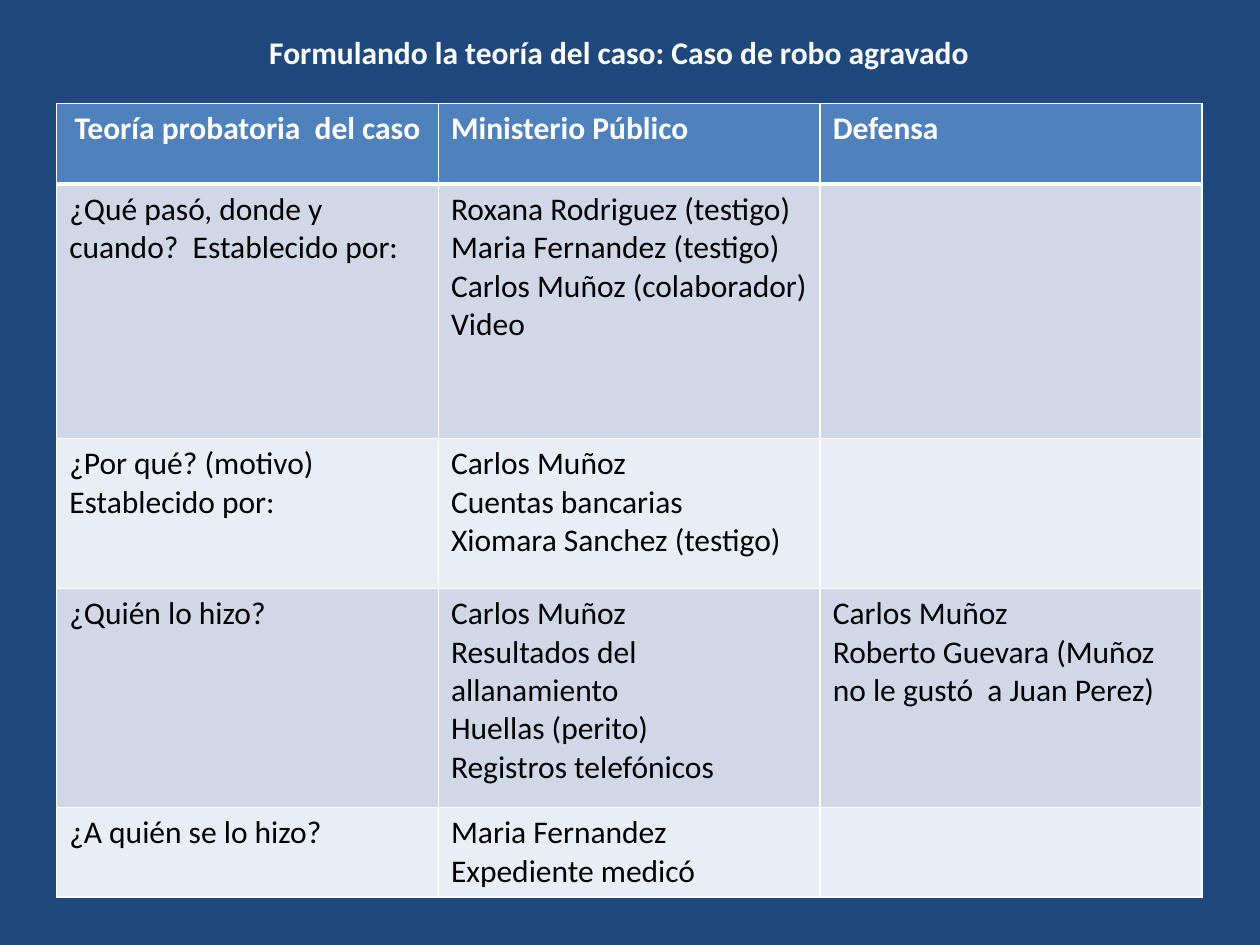
from lxml.etree import SubElement
from pptx import Presentation
from pptx.dml.color import RGBColor
from pptx.enum.text import MSO_AUTO_SIZE, PP_ALIGN
from pptx.oxml.ns import qn
from pptx.util import Inches, Pt

NAVY = RGBColor(0x1F, 0x49, 0x7D)
BLUE = RGBColor(0x4F, 0x81, 0xBD)
BAND_DARK = RGBColor(0xD0, 0xD8, 0xE8)
BAND_LIGHT = RGBColor(0xE9, 0xED, 0xF4)
WHITE = RGBColor(0xFF, 0xFF, 0xFF)
BLACK = RGBColor(0x00, 0x00, 0x00)

TITLE = "Formulando la teoría del caso: Caso de robo agravado"
ROW_HEIGHTS = [0.64, 2.02, 1.19, 1.74, 0.67]
ROWS = [
    ["Teoría probatoria  del caso", "Ministerio Público", "Defensa"],
    ["¿Qué pasó, donde y cuando?  Establecido por:",
     "Roxana Rodriguez (testigo)\nMaria Fernandez (testigo)\n"
     "Carlos Muñoz (colaborador)\nVideo", ""],
    ["¿Por qué? (motivo)\nEstablecido por:",
     "Carlos Muñoz\nCuentas bancarias\nXiomara Sanchez (testigo)", ""],
    ["¿Quién lo hizo?",
     "Carlos Muñoz\nResultados del allanamiento\nHuellas (perito)\nRegistros telefónicos",
     "Carlos Muñoz\nRoberto Guevara (Muñoz no le gustó  a Juan Perez)"],
    ["¿A quién se lo hizo?", "Maria Fernandez\nExpediente medicó", ""],
]


def format_text(text_frame, color, bold, alignment=PP_ALIGN.LEFT):
    for paragraph in text_frame.paragraphs:
        paragraph.alignment = alignment
        paragraph.font.size = Pt(18)
        for run in paragraph.runs:
            run.font.name = "Calibri"
            run.font.size = Pt(18)
            run.font.bold = bold
            run.font.color.rgb = color


def set_borders(cell, top, bottom):
    """Draw white cell borders; must run before the cell is filled."""
    properties = cell._tc.get_or_add_tcPr()
    for side, points in (("L", 1), ("R", 1), ("T", top), ("B", bottom)):
        line = SubElement(properties, qn(f"a:ln{side}"), w=str(Pt(points)))
        fill = SubElement(line, qn("a:solidFill"))
        SubElement(fill, qn("a:srgbClr"), val=str(WHITE))


def add_title(slide, left, top, width, height):
    text_frame = slide.shapes.add_textbox(left, top, width, height).text_frame
    text_frame.word_wrap = True
    text_frame.auto_size = MSO_AUTO_SIZE.SHAPE_TO_FIT_TEXT
    text_frame.text = TITLE
    format_text(text_frame, WHITE, True, PP_ALIGN.CENTER)


def add_evidence_table(slide, left, top, width, height):
    table = slide.shapes.add_table(
        len(ROWS), len(ROWS[0]), left, top, width, height).table
    for row, row_height in zip(table.rows, ROW_HEIGHTS):
        row.height = Inches(row_height)
    for row_index, texts in enumerate(ROWS):
        is_header = row_index == 0
        for column_index, text in enumerate(texts):
            cell = table.cell(row_index, column_index)
            set_borders(cell, 3 if row_index == 1 else 1, 3 if is_header else 1)
            cell.fill.solid()
            band = BAND_DARK if row_index % 2 else BAND_LIGHT
            cell.fill.fore_color.rgb = BLUE if is_header else band
            cell.text_frame.text = text
            format_text(cell.text_frame, WHITE if is_header else BLACK, is_header)
    table.cell(0, 0).text_frame.paragraphs[0].alignment = PP_ALIGN.CENTER


def main():
    presentation = Presentation()
    presentation.slide_width = Inches(10)
    presentation.slide_height = Inches(7.5)
    slide = presentation.slides.add_slide(presentation.slide_layouts[6])
    slide.background.fill.solid()
    slide.background.fill.fore_color.rgb = NAVY
    add_evidence_table(slide, Inches(0.45), Inches(0.82),
                       Inches(9.09), Inches(sum(ROW_HEIGHTS)))
    add_title(slide, Inches(1.25), Inches(0.21), Inches(7.33), Inches(0.4))
    presentation.save("out.pptx")


if __name__ == "__main__":
    main()
